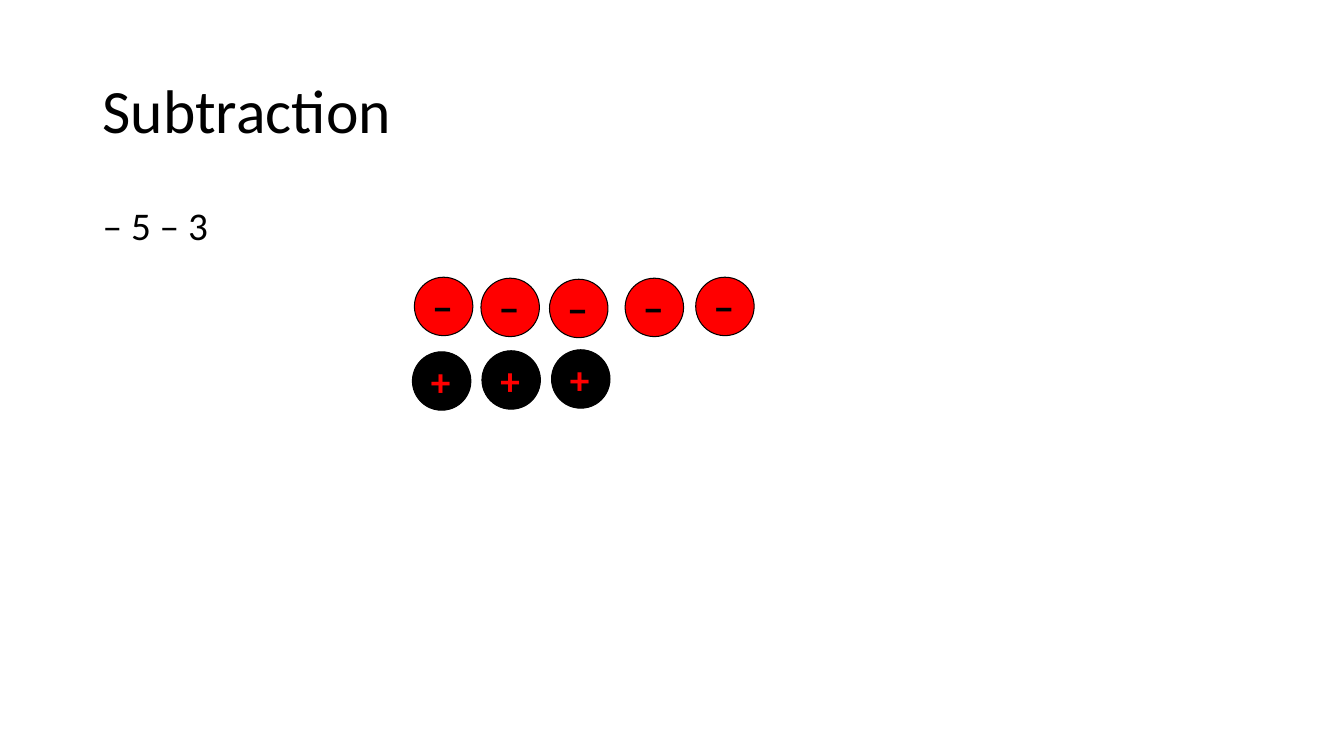
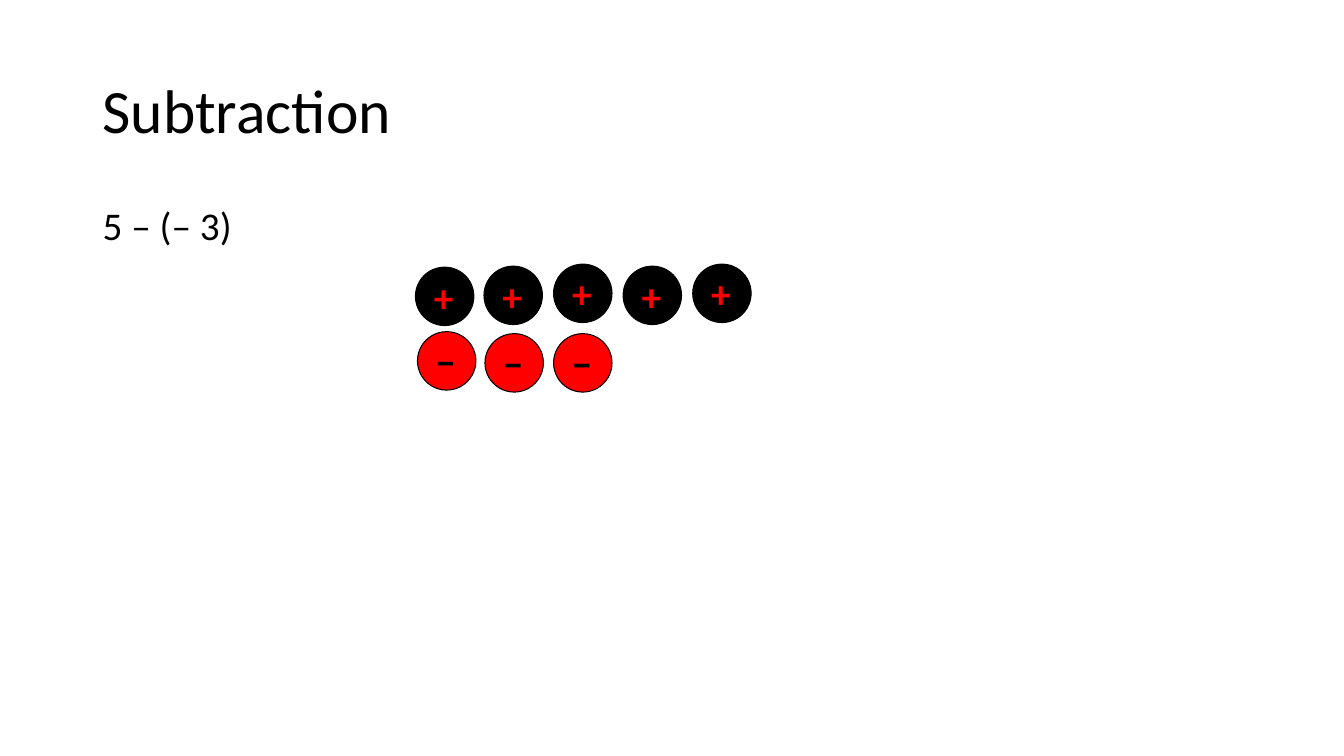
from pptx import Presentation
from pptx.dml.color import RGBColor
from pptx.enum.shapes import MSO_SHAPE
from pptx.enum.text import MSO_ANCHOR, PP_ALIGN
from pptx.util import Inches, Pt

BLACK = RGBColor(0, 0, 0)
RED = RGBColor(255, 0, 0)
FONT = "Calibri"
SIZE = 0.58
SIGNS = {"−": (RED, BLACK), "+": (BLACK, RED)}
TITLE = (0.92, 0.4, 11.5, 1.45)
BODY = (0.92, 2, 11.5, 4.76)

SLIDES = [
    ("– 5 – 3", {
        "−": [(4.11, 2.75), (4.77, 2.76), (5.45, 2.77), (6.2, 2.76), (6.9, 2.75)],
        "+": [(4.09, 3.49), (4.78, 3.48), (5.47, 3.47)],
    }),
    ("5 – (– 3)", {
        "+": [(4.12, 2.65), (4.8, 2.64), (5.49, 2.62), (6.18, 2.64), (6.87, 2.62)],
        "−": [(4.14, 3.29), (4.81, 3.31), (5.49, 3.31)],
    }),
]


def write(frame, text, size=28, color=BLACK, bold=False,
          align=PP_ALIGN.LEFT, anchor=MSO_ANCHOR.TOP, spacing=1.0):
    """Write one formatted paragraph into a text frame."""
    frame.vertical_anchor = anchor
    para = frame.paragraphs[0]
    para.alignment = align
    para.line_spacing = spacing
    run = para.add_run()
    run.text = text
    font = run.font
    font.name, font.size, font.bold = FONT, Pt(size), bold
    font.color.rgb = color


def add_text(slide, box, text, **style):
    """Add a wrapped text box filling the given box."""
    frame = slide.shapes.add_textbox(*map(Inches, box)).text_frame
    frame.word_wrap = True
    write(frame, text, spacing=0.9, **style)


def add_chip(slide, left, top, sign):
    """Add a round counter marked with its sign."""
    fill, ink = SIGNS[sign]
    chip = slide.shapes.add_shape(
        MSO_SHAPE.OVAL, *map(Inches, (left, top, SIZE, SIZE)))
    chip.shadow.inherit = False
    chip.fill.solid()
    chip.fill.fore_color.rgb = fill
    chip.line.color.rgb = BLACK
    chip.line.width = Pt(0.75)
    frame = chip.text_frame
    frame.word_wrap = False
    frame.margin_left = frame.margin_top = frame.margin_bottom = 0
    frame.margin_right = Inches(0.02)
    write(frame, sign, color=ink, bold=True,
          align=PP_ALIGN.CENTER, anchor=MSO_ANCHOR.MIDDLE)


def add_slide(deck, task, rows):
    """Add a subtraction slide with its task and rows of counters."""
    slide = deck.slides.add_slide(deck.slide_layouts[6])
    add_text(slide, TITLE, "Subtraction", size=44, anchor=MSO_ANCHOR.MIDDLE)
    add_text(slide, BODY, task)
    for sign, spots in rows.items():
        for left, top in spots:
            add_chip(slide, left, top, sign)


def main():
    """Build and save the deck."""
    deck = Presentation()
    deck.slide_width, deck.slide_height = Inches(13.33), Inches(7.5)
    for task, rows in SLIDES:
        add_slide(deck, task, rows)
    deck.save("out.pptx")


if __name__ == "__main__":
    main()
